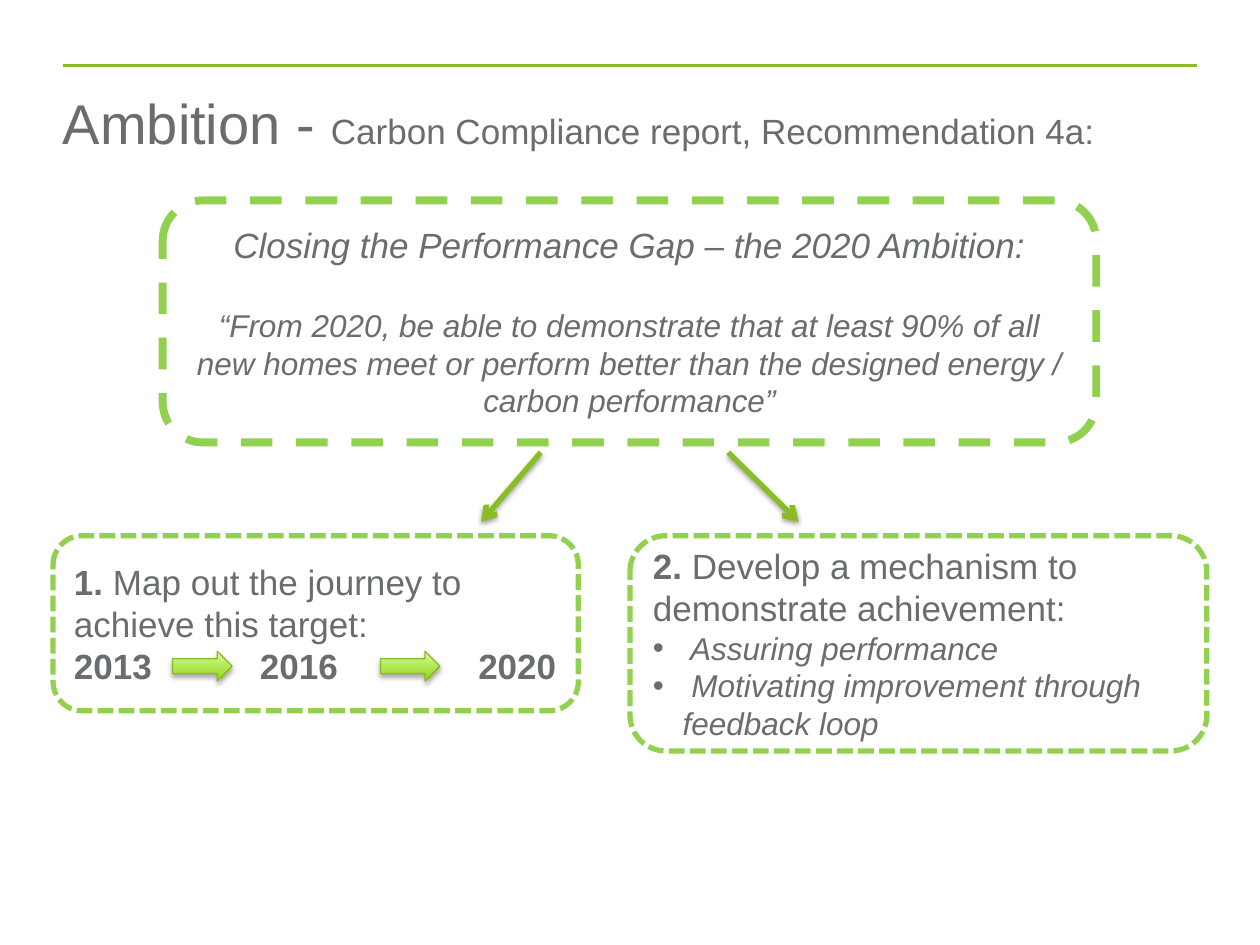
import pptx
import pptx.dml.color
import pptx.enum.dml
import pptx.enum.shapes
import pptx.enum.text
import pptx.oxml.ns
import pptx.util
from lxml import etree
from pptx.util import Cm

COLORS = {
    "text": "696D6F",
    "rule": "8ABD24",
    "border": "92D050",
    "arrow_line": "88BD1F",
    "arrow_dark": "92D40D",
    "arrow_light": "CFFFA0",
    "shadow": "000000",
}
ALIGN = pptx.enum.text.PP_ALIGN
DASH = pptx.enum.dml.MSO_LINE
SHAPE = pptx.enum.shapes.MSO_SHAPE


def rgb(name):
    return pptx.dml.color.RGBColor.from_string(COLORS[name])


def add_xml(parent, tag, **attributes):
    child = etree.SubElement(parent, pptx.oxml.ns.qn(tag))
    for key, value in attributes.items():
        child.set(key, str(value))
    return child


def add_shadow(effects, alpha, distance):
    """Put a soft shadow straight below into an effect list."""
    shadow = add_xml(effects, "a:outerShdw", blurRad=pptx.util.Pt(3.1),
                     dist=pptx.util.Pt(distance), dir=90 * 60000, rotWithShape=0)
    color = add_xml(shadow, "a:srgbClr", val=COLORS["shadow"])
    add_xml(color, "a:alpha", val=alpha * 1000)


def set_line(line, color, width):
    line.color.rgb = rgb(color)
    line.width = pptx.util.Pt(width)


def add_span(para, text, size=20, bold=False, italic=False):
    span = para.add_run()
    span.text = text
    span.font.name = "Arial"
    span.font.size = pptx.util.Pt(size)
    span.font.bold = bold
    span.font.italic = italic
    span.font.color.rgb = rgb("text")


def add_para(box, spans, align=ALIGN.LEFT, before=0, bullet=False, tabs=()):
    """Add a paragraph of (text, format) spans to a box."""
    frame = box.text_frame
    para = frame.paragraphs[0] if not frame.text else frame.add_paragraph()
    para.alignment = align
    if before:
        para.space_before = pptx.util.Pt(before)
    properties = para._p.get_or_add_pPr()
    if bullet:
        properties.set("marL", str(Cm(0.6)))
        properties.set("indent", str(-Cm(0.6)))
        add_xml(properties, "a:buFont", typeface="Arial")
        add_xml(properties, "a:buChar", char="•")
    if tabs:
        stops = add_xml(properties, "a:tabLst")
        for position in tabs:
            add_xml(stops, "a:tab", pos=Cm(position), algn="l")
    for text, style in spans:
        add_span(para, text, **style)


def add_title(page, spans):
    box = page.shapes.add_textbox(Cm(1.27), Cm(0.91), Cm(22.86), Cm(3.12))
    frame = box.text_frame
    frame.word_wrap = True
    frame.vertical_anchor = pptx.enum.text.MSO_ANCHOR.MIDDLE
    frame.margin_left = frame.margin_right = 0
    frame.margin_top = frame.margin_bottom = 0
    add_para(box, spans)


def add_panel(page, left, top, width, height, line_width, dash):
    panel = page.shapes.add_shape(SHAPE.ROUNDED_RECTANGLE,
                                  Cm(left), Cm(top), Cm(width), Cm(height))
    panel.fill.background()
    set_line(panel.line, "border", line_width)
    panel.line.dash_style = dash
    panel.shadow.inherit = False
    panel.text_frame.word_wrap = True
    panel.text_frame.vertical_anchor = pptx.enum.text.MSO_ANCHOR.MIDDLE
    return panel


def add_block_arrow(page, left, top):
    arrow = page.shapes.add_shape(SHAPE.RIGHT_ARROW, Cm(left), Cm(top), Cm(1.2), Cm(0.6))
    arrow.fill.gradient()
    arrow.fill.gradient_angle = 90
    for stop, color in zip(arrow.fill.gradient_stops, ("arrow_dark", "arrow_light")):
        stop.color.rgb = rgb(color)
    set_line(arrow.line, "arrow_line", 0.75)
    arrow.shadow.inherit = False
    effects = arrow._element.spPr.find(pptx.oxml.ns.qn("a:effectLst"))
    add_shadow(effects, alpha=35, distance=1.8)


def add_line(page, start, end, width, arrow=False):
    """Draw a green line; with arrow, give it a head and a shadow."""
    line = page.shapes.add_connector(pptx.enum.shapes.MSO_CONNECTOR.STRAIGHT,
                                     *map(Cm, start + end))
    set_line(line.line, "rule", width)
    effects = add_xml(line._element.spPr, "a:effectLst")
    if arrow:
        add_xml(line.line._get_or_add_ln(), "a:tailEnd", type="arrow")
        add_shadow(effects, alpha=38, distance=1.6)


def main():
    deck = pptx.Presentation()
    deck.slide_width, deck.slide_height = Cm(25.4), Cm(19.05)
    page = deck.slides.add_slide(deck.slide_layouts[6])
    bold, italic = {"bold": True}, {"size": 18, "italic": True}

    add_line(page, (1.27, 1.32), (24.13, 1.32), 2)
    add_title(page, [("Ambition - ", {"size": 32}),
                     ("Carbon Compliance report, Recommendation 4a:", {})])
    for left in (3.48, 7.67):
        add_block_arrow(page, left, 13.13)

    ambition = add_panel(page, 3.28, 4.04, 18.82, 4.88, 4.5, DASH.DASH)
    add_para(ambition, [("Closing the Performance Gap – the 2020 Ambition:",
                         {"italic": True})], align=ALIGN.CENTER)
    add_para(ambition, [("“From 2020, be able to demonstrate that at least 90% of all "
                         "new homes meet or perform better than the designed energy / "
                         "carbon performance”", italic)], align=ALIGN.CENTER, before=23)

    journey = add_panel(page, 1.07, 10.8, 10.59, 3.53, 3, DASH.SQUARE_DOT)
    add_para(journey, [("1. ", bold), ("Map out the journey to achieve this target:", {})])
    add_para(journey, [("2013\t2016\t2020", bold)], tabs=(3.75, 8.15))

    mechanism = add_panel(page, 12.7, 10.8, 11.63, 4.34, 3, DASH.SQUARE_DOT)
    add_para(mechanism, [("2. ", bold),
                         ("Develop a mechanism to demonstrate achievement:", {})])
    for text in (" Assuring performance", " Motivating improvement through feedback loop"):
        add_para(mechanism, [(text, italic)], bullet=True)

    add_line(page, (10.9, 9.12), (9.7, 10.52), 3, arrow=True)
    add_line(page, (14.68, 9.12), (16.1, 10.52), 3, arrow=True)
    deck.save("out.pptx")


if __name__ == "__main__":
    main()
